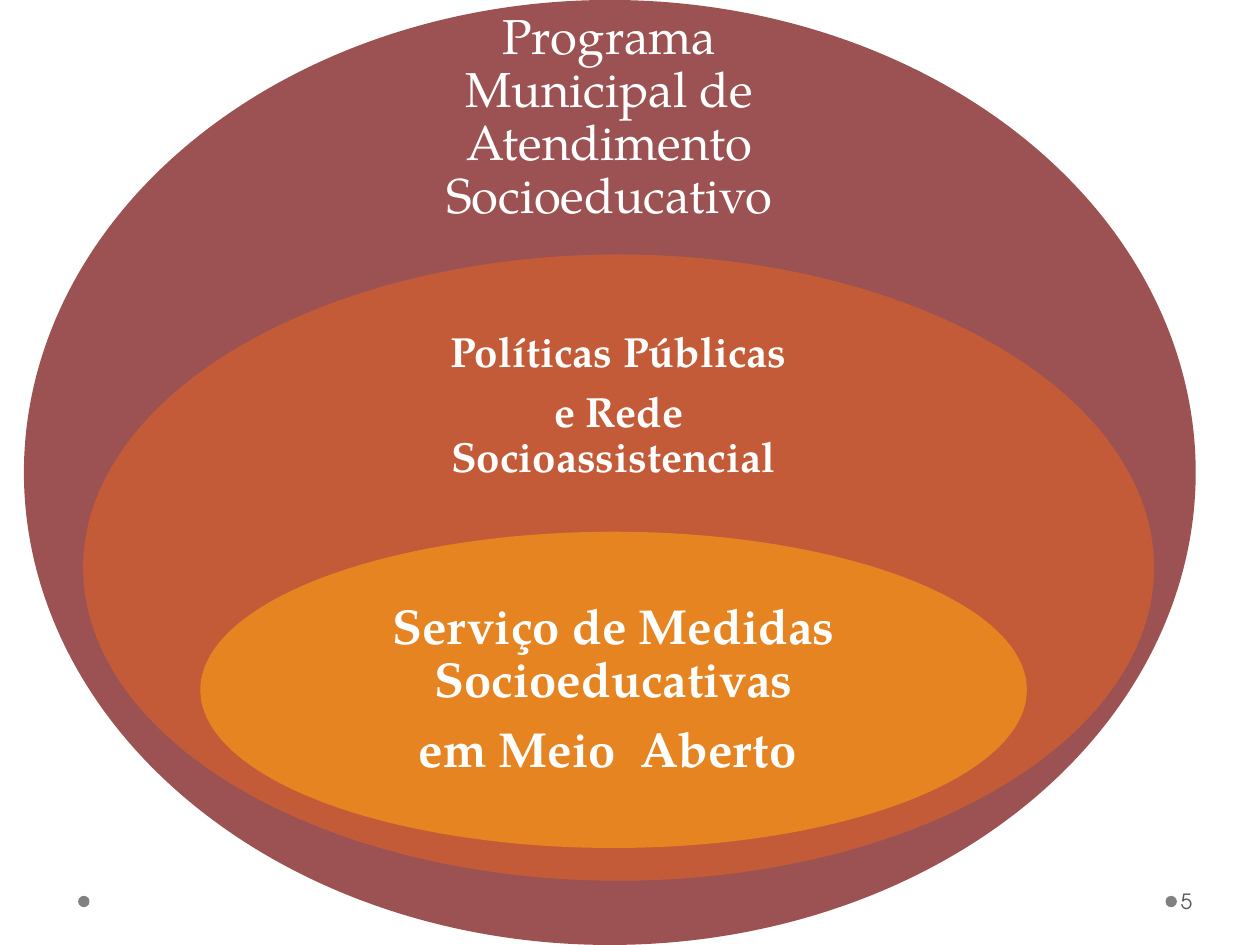
from dataclasses import dataclass

from pptx import Presentation
from pptx.dml.color import RGBColor as Color
from pptx.enum.shapes import MSO_SHAPE as Shape
from pptx.enum.text import MSO_ANCHOR as Anchor, PP_ALIGN as Align
from pptx.util import Inches, Pt


@dataclass(frozen=True)
class Theme:
    outer: str = "9C5252"
    middle: str = "C35B38"
    inner: str = "E68422"
    dot: str = "808080"
    label: str = "FFFFFF"
    number: str = "595959"
    serif: str = "TeX Gyre Pagella"
    sans: str = "TeX Gyre Adventor"
    large: int = 28
    medium: int = 24
    small: int = 12


def write_text(frame, lines, *, font, size, color, bold=False,
               align=Align.CENTER, line_spacing=0.9, gap=0.35):
    for index, line in enumerate(lines):
        para = frame.paragraphs[0] if index == 0 else frame.add_paragraph()
        para.alignment = align
        para.line_spacing = line_spacing
        para.space_after = Pt(round(size * gap, 1))
        span = para.add_run()
        span.text = line
        span.font.name = font
        span.font.size = Pt(size)
        span.font.bold = bold
        span.font.color.rgb = Color.from_string(color)


class SlideBuilder:
    def __init__(self, page, theme):
        self.page = page
        self.theme = theme

    def ellipse(self, left, top, width, height, color):
        oval = self.page.shapes.add_shape(
            Shape.OVAL, Inches(left), Inches(top), Inches(width), Inches(height))
        oval.shadow.inherit = False
        oval.fill.solid()
        oval.fill.fore_color.rgb = Color.from_string(color)
        oval.line.fill.background()

    def text(self, left, top, width, height, lines, inset, **style):
        box = self.page.shapes.add_textbox(
            Inches(left), Inches(top), Inches(width), Inches(height))
        frame = box.text_frame
        frame.word_wrap = True
        frame.vertical_anchor = Anchor.MIDDLE
        frame.margin_left = frame.margin_right = Inches(inset)
        frame.margin_top = frame.margin_bottom = Inches(inset)
        write_text(frame, lines, **style)

    def label(self, bounds, lines, inset, size, bold=True):
        self.text(*bounds, lines, inset, font=self.theme.serif, size=size,
                  color=self.theme.label, bold=bold)

    def page_number(self, number):
        self.text(9.34, 6.95, 0.61, 0.4, [number], 0.03, font=self.theme.sans,
                  size=self.theme.small, color=self.theme.number,
                  align=Align.LEFT, line_spacing=1, gap=0)


def main():
    theme = Theme()
    deck = Presentation()
    deck.slide_width, deck.slide_height = Inches(10), Inches(7.5)
    builder = SlideBuilder(deck.slides.add_slide(deck.slide_layouts[6]), theme)

    for left in (9.25, 0.62):
        builder.ellipse(left, 7.11, 0.09, 0.09, theme.dot)

    builder.ellipse(0.19, 0, 9.3, 7.5, theme.outer)
    builder.label((3.21, 0.38, 3.25, 1.12),
                  ["Programa Municipal de Atendimento Socioeducativo"],
                  0.22, theme.large, bold=False)

    builder.ellipse(0.66, 2.02, 8.5, 4.97, theme.middle)
    builder.label((2.93, 2.76, 3.96, 0.93),
                  ["Políticas Públicas", "e Rede Socioassistencial "],
                  0.31, theme.medium)

    builder.ellipse(1.59, 4.22, 6.56, 2.51, theme.inner)
    builder.label((2.55, 4.85, 4.64, 1.25),
                  ["Serviço de Medidas Socioeducativas", "em Meio  Aberto "],
                  0.22, theme.large)

    builder.page_number("5")
    deck.save("out.pptx")


if __name__ == "__main__":
    main()
